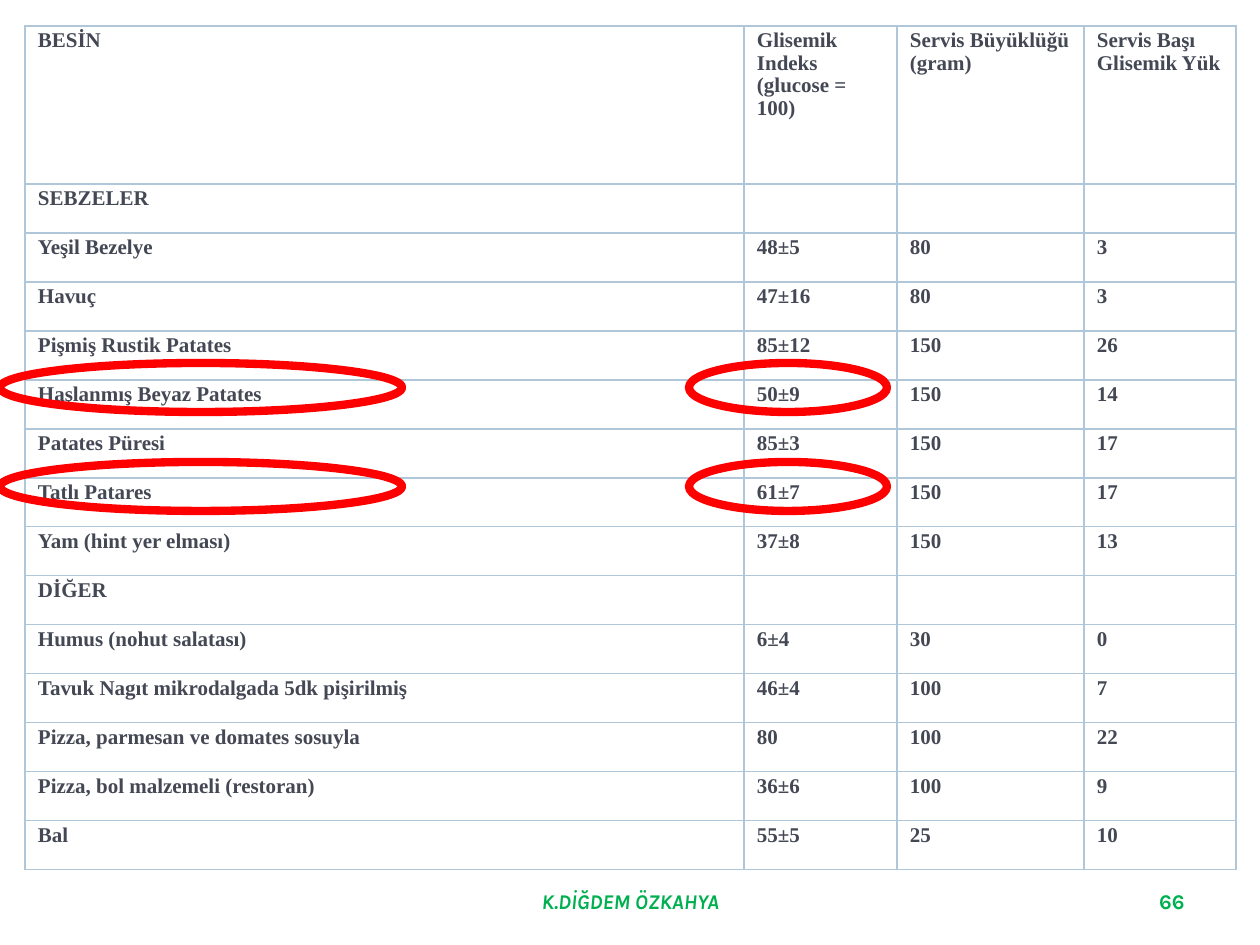
"""Build a slide with a glycemic index table and four highlighted cells."""
from lxml.etree import SubElement
from pptx import Presentation
from pptx.dml.color import RGBColor
from pptx.enum.shapes import MSO_SHAPE
from pptx.enum.text import MSO_ANCHOR, PP_ALIGN
from pptx.oxml.ns import qn
from pptx.util import Pt

SCALE = 914400 / 126
ROWS = [
    ("BESİN", "Glisemik Indeks\n(glucose = 100)", "Servis Büyüklüğü (gram)", "Servis Başı Glisemik Yük"),
    ("SEBZELER", "", "", ""),
    ("Yeşil Bezelye", "48±5", "80", "3"),
    ("Havuç", "47±16", "80", "3"),
    ("Pişmiş Rustik Patates", "85±12", "150", "26"),
    ("Haşlanmış Beyaz Patates", "50±9", "150", "14"),
    ("Patates Püresi", "85±3", "150", "17"),
    ("Tatlı Patares", "61±7", "150", "17"),
    ("Yam (hint yer elması)", "37±8", "150", "13"),
    ("DİĞER", "", "", ""),
    ("Humus (nohut salatası)", "6±4", "30", "0"),
    ("Tavuk Nagıt mikrodalgada 5dk pişirilmiş", "46±4", "100", "7"),
    ("Pizza, parmesan ve domates sosuyla", "80", "100", "22"),
    ("Pizza, bol malzemeli (restoran)", "36±6", "100", "9"),
    ("Bal", "55±5", "25", "10"),
]
COLUMN_WIDTHS = [719, 153, 187, 152]
HEADER_HEIGHT, ROW_HEIGHT = 158, 49
TABLE_LEFT, TABLE_TOP = 25, 26
CELL_MARGINS = {"margin_left": 13, "margin_right": 13, "margin_top": 4, "margin_bottom": 4}
CELL_FONT = {"name": "Times New Roman", "size": Pt(12), "bold": True}
FOOTER_FONT = {"name": "Karla", "size": Pt(12), "bold": True}
FOOTERS = [
    ("K.DİĞDEM ÖZKAHYA", 431, 399, PP_ALIGN.CENTER, True),
    ("66", 903, 294, PP_ALIGN.RIGHT, False),
]
FOOTER_TOP, FOOTER_HEIGHT = 876, 50
RING_COLUMNS = [(0, 402), (689, 198)]
RING_TOPS = [363, 462]
RING_HEIGHT = 49


def px(length):
    return round(length * SCALE)


def color(code):
    return RGBColor.from_string(code)


def set_font(font, values, code):
    for name, value in values.items():
        setattr(font, name, value)
    font.color.rgb = color(code)


def add_borders(cell, code):
    properties = cell._tc.get_or_add_tcPr()
    for position, side in enumerate(("lnL", "lnR", "lnT", "lnB")):
        line = properties.makeelement(qn(f"a:{side}"), {"w": str(Pt(1))})
        fill = SubElement(line, qn("a:solidFill"))
        SubElement(fill, qn("a:srgbClr"), val=code)
        properties.insert(position, line)


def fill_cell(cell, text):
    for name, margin in CELL_MARGINS.items():
        setattr(cell, name, px(margin))
    cell.fill.solid()
    cell.fill.fore_color.rgb = color("FFFFFF")
    add_borders(cell, "B0C6D9")
    para = cell.text_frame.paragraphs[0]
    para.text = text.replace("\n", "\v")
    para.line_spacing = Pt(12.8)
    set_font(para.font, CELL_FONT, "434854")
    for span in para.runs:
        set_font(span.font, CELL_FONT, "434854")


def add_food_table(page):
    height = HEADER_HEIGHT + ROW_HEIGHT * (len(ROWS) - 1)
    table = page.shapes.add_table(
        len(ROWS), len(COLUMN_WIDTHS), px(TABLE_LEFT), px(TABLE_TOP), px(sum(COLUMN_WIDTHS)), px(height)
    ).table
    for column, width in zip(table.columns, COLUMN_WIDTHS):
        column.width = px(width)
    for index, values in enumerate(ROWS):
        table.rows[index].height = px(ROW_HEIGHT if index else HEADER_HEIGHT)
        for cell, text in zip(table.rows[index].cells, values):
            fill_cell(cell, text)


def add_footer(page, text, left, width, alignment, italic):
    box = page.shapes.add_textbox(px(left), px(FOOTER_TOP), px(width), px(FOOTER_HEIGHT))
    frame = box.text_frame
    frame.word_wrap = True
    frame.vertical_anchor = MSO_ANCHOR.MIDDLE
    para = frame.paragraphs[0]
    para.alignment = alignment
    span = para.add_run()
    span.text = text
    set_font(span.font, FOOTER_FONT | {"italic": italic}, "00B050")


def add_ring(page, left, top, width):
    ring = page.shapes.add_shape(MSO_SHAPE.OVAL, px(left), px(top), px(width), px(RING_HEIGHT))
    ring.shadow.inherit = False
    ring.fill.background()
    ring.line.color.rgb = color("FF0000")
    ring.line.width = Pt(4.75)


def main():
    deck = Presentation()
    deck.slide_width, deck.slide_height = px(1260), px(945)
    page = deck.slides.add_slide(deck.slide_layouts[6])
    for footer in FOOTERS:
        add_footer(page, *footer)
    add_food_table(page)
    for left, width in RING_COLUMNS:
        for top in RING_TOPS:
            add_ring(page, left, top, width)
    deck.save("out.pptx")


if __name__ == "__main__":
    main()
